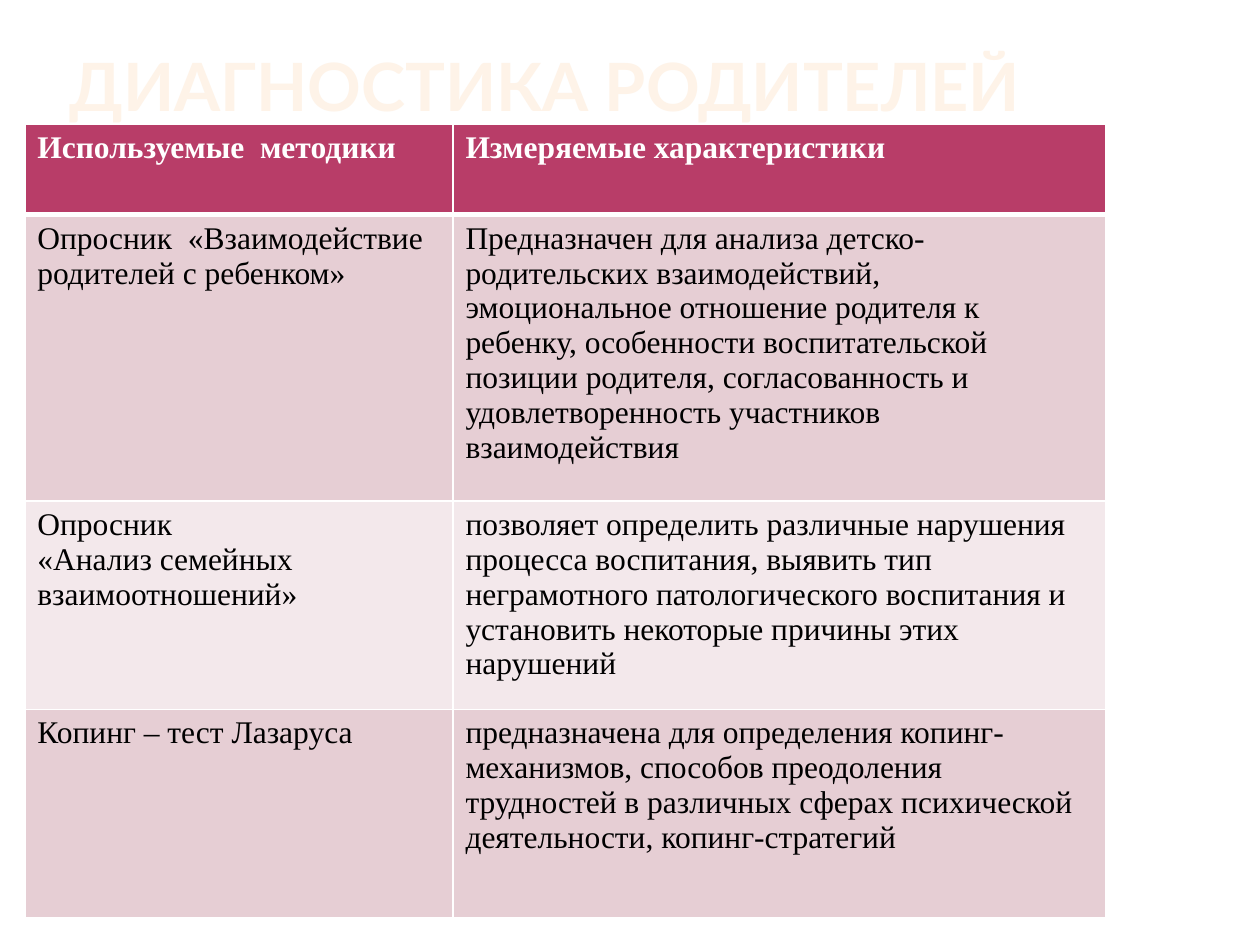
import pptx
import pptx.util
import pptx.dml.color
import pptx.enum.text
import pptx.oxml
import pptx.oxml.ns

Cm = pptx.util.Cm
Pt = pptx.util.Pt
RGBColor = pptx.dml.color.RGBColor

TITLE = "ДИАГНОСТИКА РОДИТЕЛЕЙ"
ROWS = [
    (["Используемые  методики"], ["Измеряемые характеристики"]),
    (["Опросник  «Взаимодействие родителей с ребенком»"],
     ["Предназначен для анализа детско-родительских взаимодействий, "
      "эмоциональное отношение родителя к ребенку, особенности "
      "воспитательской позиции родителя, согласованность и "
      "удовлетворенность участников взаимодействия"]),
    (["Опросник", "«Анализ семейных взаимоотношений»"],
     ["позволяет определить различные нарушения процесса воспитания, "
      "выявить тип неграмотного патологического воспитания и "
      "установить некоторые причины этих нарушений"]),
    (["Копинг – тест Лазаруса"],
     ["предназначена для определения копинг-механизмов, способов "
      "преодоления трудностей в различных сферах психической "
      "деятельности, копинг-стратегий"]),
]
COLUMN_WIDTHS = [8.63, 13.17]
ROW_HEIGHTS = [1.82, 5.77, 4.2, 4.2]

CREAM = RGBColor(0xFE, 0xF3, 0xE8)
WHITE = RGBColor(0xFF, 0xFF, 0xFF)
BLACK = RGBColor(0, 0, 0)
RASPBERRY = RGBColor(0xB8, 0x3D, 0x68)
ROSE = RGBColor(0xE6, 0xCE, 0xD4)
PALE_ROSE = RGBColor(0xF3, 0xE8, 0xEB)


def add_text(paragraph, text, font_name, size, color, bold):
    run = paragraph.add_run()
    run.text = text
    run.font.name = font_name
    run.font.size = Pt(size)
    run.font.bold = bold
    run.font.color.rgb = color


def add_borders(cell, bottom_width):
    properties = cell._tc.get_or_add_tcPr()
    for index, side in enumerate("LRTB"):
        width = Pt(bottom_width if side == "B" else 1)
        properties.insert(index, pptx.oxml.parse_xml(
            f'<a:ln{side} {pptx.oxml.ns.nsdecls("a")} w="{width}">'
            f'<a:solidFill><a:srgbClr val="{WHITE}"/></a:solidFill></a:ln{side}>'))


def add_title(slide):
    title = slide.shapes.add_textbox(Cm(1.27), Cm(0.76), Cm(22.86), Cm(1.75))
    frame = title.text_frame
    frame.word_wrap = True
    frame.vertical_anchor = pptx.enum.text.MSO_ANCHOR.BOTTOM
    frame.margin_left = frame.margin_right = Cm(0.13)
    frame.margin_top = frame.margin_bottom = 0
    add_text(frame.paragraphs[0], TITLE, "Lato", 38, CREAM, True)


def add_methods_table(slide):
    table = slide.shapes.add_table(
        len(ROWS), len(COLUMN_WIDTHS), Cm(0.5), Cm(2.51),
        Cm(sum(COLUMN_WIDTHS)), Cm(sum(ROW_HEIGHTS))).table
    for column, width in zip(table.columns, COLUMN_WIDTHS):
        column.width = Cm(width)
    for row_index, (row, height) in enumerate(zip(ROWS, ROW_HEIGHTS)):
        table.rows[row_index].height = Cm(height)
        header = row_index == 0
        band = ROSE if row_index % 2 else PALE_ROSE
        for column_index, lines in enumerate(row):
            cell = table.cell(row_index, column_index)
            add_borders(cell, 3 if header else 1)
            cell.fill.solid()
            cell.fill.fore_color.rgb = RASPBERRY if header else band
            frame = cell.text_frame
            for line_index, line in enumerate(lines):
                paragraph = frame.add_paragraph() if line_index else frame.paragraphs[0]
                add_text(paragraph, line, "Times New Roman", 18,
                         WHITE if header else BLACK, header)


def main():
    presentation = pptx.Presentation()
    presentation.slide_width = Cm(25.4)
    presentation.slide_height = Cm(19.05)
    slide = presentation.slides.add_slide(presentation.slide_layouts[6])
    add_title(slide)
    add_methods_table(slide)
    presentation.save("out.pptx")


if __name__ == "__main__":
    main()
